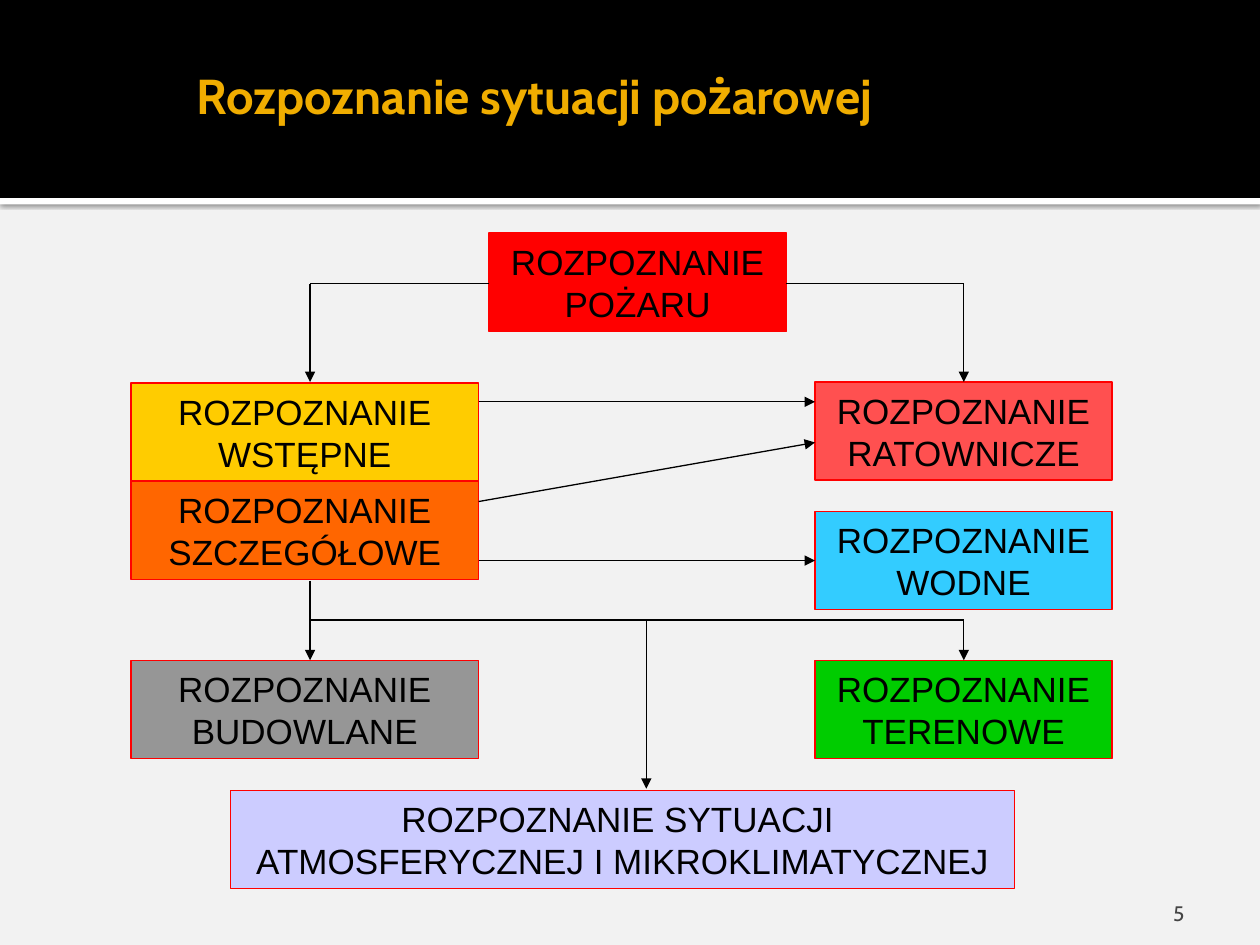
from pptx import Presentation
from pptx.dml.color import RGBColor
from pptx.enum.shapes import MSO_CONNECTOR, MSO_SHAPE
from pptx.enum.text import MSO_ANCHOR, PP_ALIGN
from pptx.oxml import parse_xml
from pptx.oxml.ns import nsdecls, qn
from pptx.util import Cm, Pt
from lxml import etree

RECTANGLE, STRAIGHT = MSO_SHAPE.RECTANGLE, MSO_CONNECTOR.STRAIGHT
LEFT, CENTER, RIGHT = PP_ALIGN.LEFT, PP_ALIGN.CENTER, PP_ALIGN.RIGHT
MIDDLE, BOTTOM = MSO_ANCHOR.MIDDLE, MSO_ANCHOR.BOTTOM


def color(value):
    return RGBColor.from_string(value)


def write(box, text, font, size, ink, align, anchor, bold=False):
    frame = box.text_frame
    frame.word_wrap = True
    frame.vertical_anchor = anchor
    para = frame.paragraphs[0]
    para.text = text
    para.alignment = align
    para.font.name = font
    para.font.size = Pt(size)
    para.font.bold = bold
    para.font.color.rgb = color(ink)
    return frame


deck = Presentation()
deck.slide_width, deck.slide_height = Cm(25.4), Cm(19.05)
page = deck.slides.add_slide(deck.slide_layouts[6])
page.background.fill.solid()
page.background.fill.fore_color.rgb = color("F2F2F2")

# Header: white strip with a soft shadow, then the black band
for top, height, fill in [(3.99, 0.13, "FFFFFF"), (0, 3.99, "000000")]:
    band = page.shapes.add_shape(RECTANGLE, 0, Cm(top), deck.slide_width, Cm(height))
    band.shadow.inherit = False
    band.fill.solid()
    band.fill.fore_color.rgb = color(fill)
    band.line.fill.background()
    if fill == "FFFFFF":
        effects = band.fill._xPr.find(qn("a:effectLst"))
        effects.append(parse_xml(
            f'<a:outerShdw {nsdecls("a")} blurRad="{Pt(2.5)}" dist="{Pt(0.8)}" '
            'dir="5400000" algn="tl" rotWithShape="0"><a:srgbClr val="000000">'
            '<a:alpha val="60000"/></a:srgbClr></a:outerShdw>'))

# Title and slide number
title = page.shapes.add_textbox(Cm(3.71), Cm(0.69), Cm(21), Cm(2.44))
frame = write(title, "Rozpoznanie sytuacji pożarowej", "Cabin", 28, "F0AD00",
              LEFT, MIDDLE, bold=True)
frame.margin_right = Cm(0.13)
number = page.shapes.add_textbox(Cm(18.21), Cm(17.35), Cm(5.92), Cm(1.32))
frame = write(number, "5", "Cabin", 12, "454545", RIGHT, BOTTOM)
frame.margin_bottom = 0

# Boxes: two columns, one box on top and a wide one below
left_column, right_column = (2.64, 7.01), (16.43, 5.99)
box_height = 1.98
boxes = [
    ("ROZPOZNANIE POŻARU", (9.86, 5.99), 4.7, "FF0000"),
    ("ROZPOZNANIE SYTUACJI \vATMOSFERYCZNEJ I MIKROKLIMATYCZNEJ",
     (4.65, 15.8), 15.93, "CCCCFF"),
    ("ROZPOZNANIE RATOWNICZE", right_column, 7.7, "FF5050"),
    ("ROZPOZNANIE WODNE", right_column, 10.31, "33CCFF"),
    ("ROZPOZNANIE BUDOWLANE", left_column, 13.31, "969696"),
    ("ROZPOZNANIE TERENOWE", right_column, 13.31, "00CC00"),
    ("ROZPOZNANIE WSTĘPNE", left_column, 7.72, "FFCC00"),
    ("ROZPOZNANIE SZCZEGÓŁOWE", left_column, 9.7, "FF6600"),
]
for text, (left, width), top, fill in boxes:
    box = page.shapes.add_shape(RECTANGLE, Cm(left), Cm(top), Cm(width), Cm(box_height))
    box.shadow.inherit = False
    box.fill.solid()
    box.fill.fore_color.rgb = color(fill)
    box.line.color.rgb = color("FF0000")
    box.line.width = Pt(0.75)
    write(box, text, "Arial", 20, "000000", CENTER, MIDDLE)

# Lines and arrows: start x, start y, end x, end y, arrowhead
left_axis, middle_axis, right_axis = 6.25, 13.03, 19.43
left_edge, right_edge = 9.65, 16.43
upper_level, lower_level = 5.72, 12.5
lines = [
    (left_axis, upper_level, left_axis, 7.7, True),
    (right_axis, upper_level, right_axis, 7.7, True),
    (9.86, upper_level, left_axis, upper_level, False),
    (right_axis, upper_level, 15.85, upper_level, False),
    (left_edge, 8.1, right_edge, 8.1, True),
    (left_edge, 10.11, right_edge, 8.92, True),
    (left_edge, 11.3, right_edge, 11.3, True),
    (left_axis, 11.71, left_axis, 13.31, True),
    (left_axis, lower_level, right_axis, lower_level, False),
    (right_axis, lower_level, right_axis, 13.31, True),
    (middle_axis, lower_level, middle_axis, 15.9, True),
]
for *ends, arrow in lines:
    line = page.shapes.add_connector(STRAIGHT, *[Cm(value) for value in ends])
    line.line.color.rgb = color("000000")
    line.line.width = Pt(0.75)
    properties = line._element.spPr
    if arrow:
        etree.SubElement(properties.find(qn("a:ln")), qn("a:tailEnd"), type="triangle")
    etree.SubElement(properties, qn("a:effectLst"))

deck.save("out.pptx")
